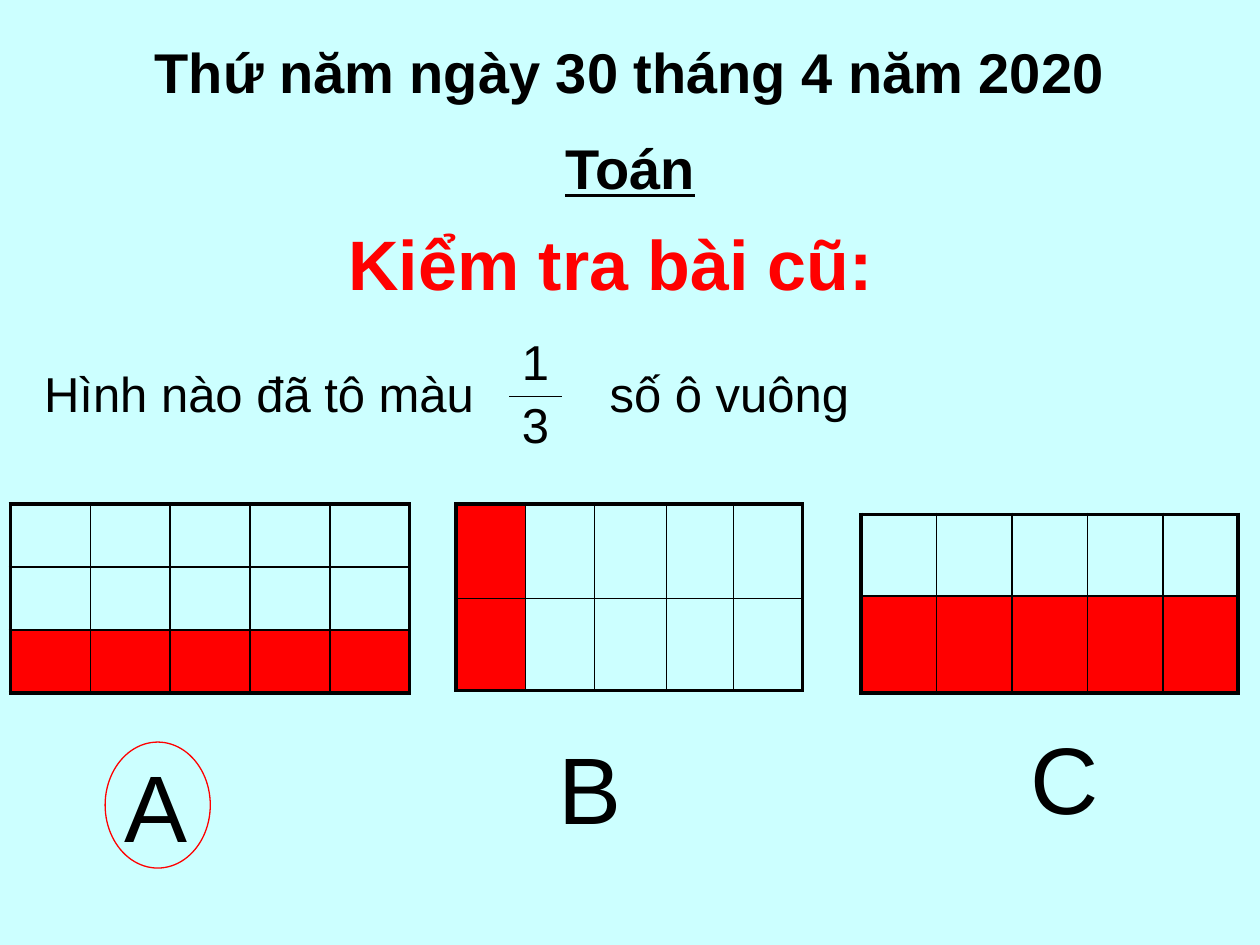
from lxml.etree import SubElement
from pptx import Presentation
from pptx.dml.color import RGBColor
from pptx.enum.shapes import MSO_CONNECTOR, MSO_SHAPE
from pptx.enum.text import MSO_ANCHOR, MSO_AUTO_SIZE, PP_ALIGN
from pptx.oxml.ns import qn
from pptx.util import Cm, Pt

COLORS = {"background": "CCFFFF", "ink": "000000", "accent": "FF0000"}
OUTER, INNER = 2.25, 1

# Each grid: corner, column widths, row heights, shaded cells, answer offset
FIGURES = [
    {"letter": "A", "corner": (0.21, 10.16), "cols": [1.61] * 5,
     "rows": [1.27] * 3, "shaded": lambda row, col: row == 2,
     "offset": (2.05, 4.8), "correct": True},
    {"letter": "B", "corner": (9.19, 10.16),
     "cols": [1.4, 1.4, 1.45, 1.35, 1.39], "rows": [1.9, 1.86],
     "shaded": lambda row, col: col == 0,
     "offset": (1.81, 4.44), "correct": False},
    {"letter": "C", "corner": (17.36, 10.37), "cols": [1.52] * 5,
     "rows": [1.64, 1.96], "shaded": lambda row, col: row == 1,
     "offset": (3.17, 4.03), "correct": False},
]


def rgb(name):
    return RGBColor.from_string(COLORS[name])


def cm(*lengths):
    return [Cm(length) for length in lengths]


def style_paragraph(paragraph, text, color="ink", align=PP_ALIGN.LEFT, **font):
    """Write one run, with half a line of space before it."""
    paragraph.alignment = align
    before = SubElement(paragraph._p.get_or_add_pPr(), qn("a:spcBef"))
    SubElement(before, qn("a:spcPct"), val="50000")
    run = paragraph.add_run()
    run.text = text
    for name, value in {"name": "Arial", **font}.items():
        setattr(run.font, name, value)
    run.font.color.rgb = rgb(color)


def prepare_frame(frame):
    settings = {"word_wrap": True, "vertical_anchor": MSO_ANCHOR.TOP,
                "auto_size": MSO_AUTO_SIZE.SHAPE_TO_FIT_TEXT}
    for name, value in settings.items():
        setattr(frame, name, value)
    return frame


def add_text(shapes, box, text, size):
    frame = prepare_frame(shapes.add_textbox(*cm(*box)).text_frame)
    style_paragraph(frame.paragraphs[0], text, size=Pt(size))
    return frame.paragraphs[0]


def add_title(slide, box):
    title = slide.shapes.title
    for name, value in zip(("left", "top", "width", "height"), cm(*box)):
        setattr(title, name, value)
    frame = prepare_frame(title.text_frame)
    style_paragraph(frame.paragraphs[0], "Kiểm tra bài cũ:", "accent",
                    size=Pt(40), bold=True)


def add_heading(slide, box):
    frame = prepare_frame(slide.shapes.add_textbox(*cm(*box)).text_frame)
    lines = [("Thứ năm ngày 30 tháng 4 năm 2020", False), ("Toán", True)]
    for index, (text, underline) in enumerate(lines):
        paragraph = frame.add_paragraph() if index else frame.paragraphs[0]
        style_paragraph(paragraph, text, align=PP_ALIGN.CENTER, size=Pt(32),
                        bold=True, underline=underline)


def add_fraction(slide, left, top, numerator, denominator):
    shapes = slide.shapes.add_group_shape().shapes
    add_text(shapes, (left, top, 1.69, 1.45), numerator, 28)
    bar_y = top + 1.44
    bar = shapes.add_connector(MSO_CONNECTOR.STRAIGHT,
                               *cm(left, bar_y, left + 1.06, bar_y))
    bar.line.color.rgb = rgb("ink")
    bar.line.width = Pt(0.75)
    SubElement(bar._element.spPr, qn("a:effectLst"))
    add_text(shapes, (left, top + 1.27, 1.69, 1.45), denominator, 28)


def add_question(slide, left, top):
    """Sentence with a tab gap that holds the fraction."""
    sentence = add_text(slide.shapes, (left, top, 20.96, 1.45),
                        "Hình nào đã tô màu\tsố ô vuông", 28)
    tabs = SubElement(sentence._p.get_or_add_pPr(), qn("a:tabLst"))
    SubElement(tabs, qn("a:tab"), pos=str(Cm(11.4)), algn="l")
    add_fraction(slide, left + 9.63, top - 0.64, "1", "3")


def set_borders(cell, widths):
    """Draw left, right, top and bottom borders, widths in points."""
    properties = cell._tc.get_or_add_tcPr()
    for index, (side, width) in enumerate(zip("LRTB", widths)):
        border = SubElement(properties, qn(f"a:ln{side}"), w=str(Pt(width)))
        fill = SubElement(border, qn("a:solidFill"))
        SubElement(fill, qn("a:srgbClr"), val=COLORS["ink"])
        properties.insert(index, border)


def add_grid(slide, left, top, cols, rows, shaded):
    table = slide.shapes.add_table(
        len(rows), len(cols), *cm(left, top, sum(cols), sum(rows))).table
    table.first_row = table.horz_banding = False
    for column, width in zip(table.columns, cols):
        column.width = Cm(width)
    for row, height in zip(table.rows, rows):
        row.height = Cm(height)
    for r in range(len(rows)):
        for c in range(len(cols)):
            cell = table.cell(r, c)
            if shaded(r, c):
                cell.fill.solid()
                cell.fill.fore_color.rgb = rgb("accent")
            else:
                cell.fill.background()
            on_edge = (c == 0, c == len(cols) - 1, r == 0, r == len(rows) - 1)
            set_borders(cell, [OUTER if edge else INNER for edge in on_edge])


def add_ring(slide, box):
    ring = slide.shapes.add_shape(MSO_SHAPE.OVAL, *cm(*box))
    ring.shadow.inherit = False
    ring.fill.background()
    ring.line.color.rgb = rgb("accent")
    ring.line.width = Pt(0.75)


def add_figure(slide, letter, corner, cols, rows, shaded, offset, correct):
    """Grid with its answer letter below, ringed when correct."""
    add_grid(slide, *corner, cols, rows, shaded)
    left, top = (start + shift for start, shift in zip(corner, offset))
    if correct:
        add_ring(slide, (left - 0.14, top, 2.12, 2.54))
    add_text(slide.shapes, (left, top, 2.96, 2.54), letter, 54)


def main():
    deck = Presentation()
    deck.slide_width, deck.slide_height = cm(25.4, 19.05)
    slide = deck.slides.add_slide(deck.slide_layouts.get_by_name("Title Only"))
    slide.background.fill.solid()
    slide.background.fill.fore_color.rgb = rgb("background")
    add_title(slide, (6.77, 4.32, 11.85, 1.96))
    add_heading(slide, (0, 0.64, 25.4, 3.68))
    add_question(slide, 0.64, 7.2)
    for figure in FIGURES:
        add_figure(slide, **figure)
    deck.save("out.pptx")


if __name__ == "__main__":
    main()
